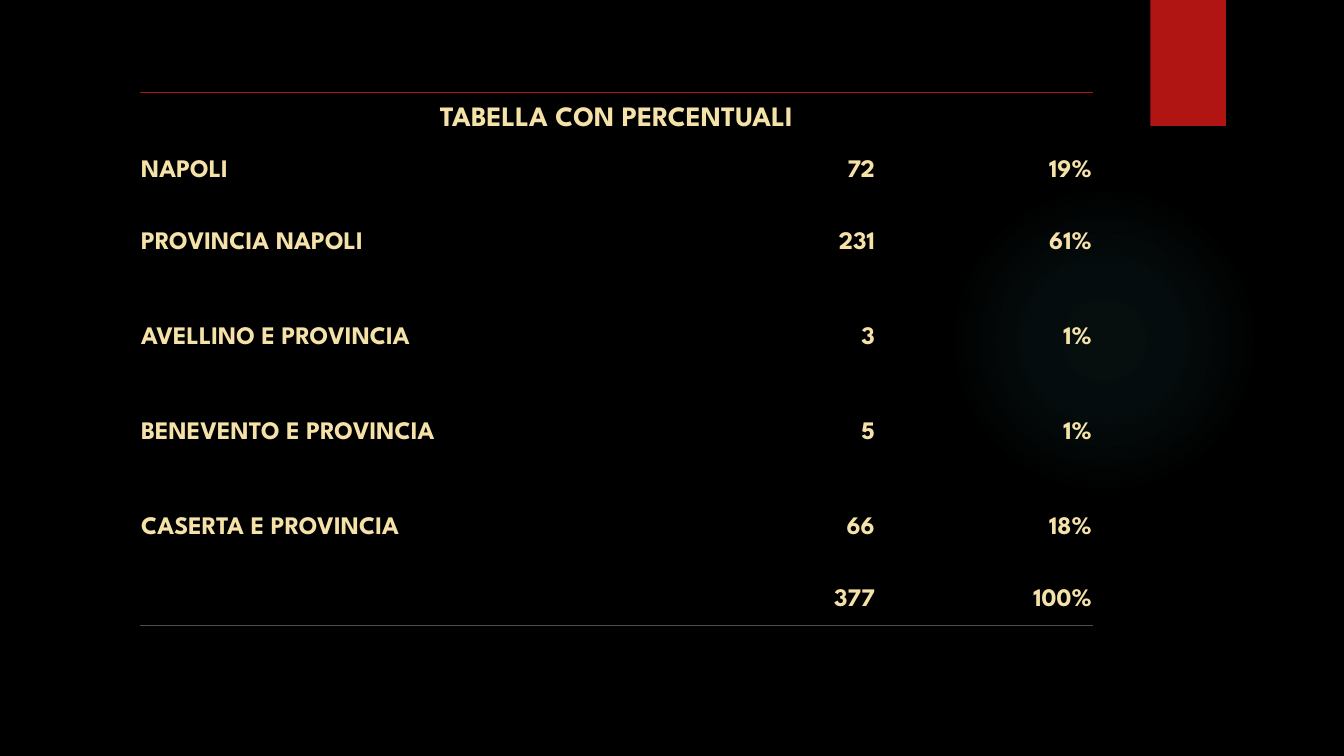
from lxml import etree
from pptx import Presentation
from pptx import util as u
from pptx.dml.color import RGBColor
from pptx.enum import shapes, text
from pptx.oxml import ns

Pt = u.Pt
HUES = {"back": "000000", "glow": "50B9C1", "red": "B01513",
        "gray": "4D4D4D", "text": "F5E2A9"}
FONT = "League Spartan"
PLAIN = "{2D5ABB26-0587-4C30-8999-92F81FD0307C}"  # no style, no grid
LEFT, RIGHT = text.PP_ALIGN.LEFT, text.PP_ALIGN.RIGHT
COLS = [229.7, 229.7, 66.2, 154.8]
ROWS = [38.2, 35.3] + [67.9] * 4 + [35.3]
TITLE = "TABELLA CON PERCENTUALI"
DATA = [
    ("NAPOLI", "72", "19%"),
    ("PROVINCIA NAPOLI", "231", "61%"),
    ("AVELLINO E PROVINCIA", "3", "1%"),
    ("BENEVENTO E PROVINCIA", "5", "1%"),
    ("CASERTA E PROVINCIA", "66", "18%"),
    ("", "377", "100%"),
]


def hue(name):
    return RGBColor.from_string(HUES[name])


def node(up, tag, **attrs):
    return etree.SubElement(up, ns.qn(tag), attrs)


def add_form(slide, kind, box, name):
    form = slide.shapes.add_shape(kind, *[Pt(n) for n in box])
    form.shadow.inherit = False
    form.fill.solid()
    form.fill.fore_color.rgb = hue(name)
    form.line.fill.background()
    return form


def add_glow(slide, box):
    form = add_form(slide, shapes.MSO_SHAPE.OVAL, box, "glow")
    props = form._element.spPr
    grad = etree.Element(ns.qn("a:gradFill"), rotWithShape="1")
    stops = node(grad, "a:gsLst")
    for pos, alpha in [(0, 7), (36, 6), (69, 0)]:
        stop = node(stops, "a:gs", pos=str(pos * 1000))
        tint = node(stop, "a:srgbClr", val=HUES["glow"])
        node(tint, "a:alpha", val=str(alpha * 1000))
    way = node(grad, "a:path", path="circle")
    node(way, "a:fillToRect", l="50000", t="50000", r="50000", b="50000")
    props.replace(props.find(ns.qn("a:solidFill")), grad)


def set_cell(cell, words, size, align):
    para = cell.text_frame.paragraphs[0]
    para.alignment = align
    run = para.add_run()
    run.text = words
    font = run.font
    font.name, font.size, font.bold = FONT, Pt(size), True
    font.color.rgb = hue("text")


def add_rule(cell, side, name):
    line = etree.Element(ns.qn("a:" + side), w=str(Pt(1)))
    node(node(line, "a:solidFill"), "a:srgbClr", val=HUES[name])
    cell._tc.get_or_add_tcPr().insert(0, line)


def add_grid(slide, left, top):
    frame = slide.shapes.add_table(len(ROWS), len(COLS), Pt(left), Pt(top),
                                   Pt(sum(COLS)), Pt(sum(ROWS)))
    grid = frame.table
    grid.first_row = grid.horz_banding = False
    grid._tbl.tblPr.find(ns.qn("a:tableStyleId")).text = PLAIN
    for col, wide in zip(grid.columns, COLS):
        col.width = Pt(wide)
    for row, high in zip(grid.rows, ROWS):
        row.height = Pt(high)
    for cell in grid.iter_cells():
        cell.fill.background()
        cell.vertical_anchor = text.MSO_ANCHOR.MIDDLE
        cell.margin_left = cell.margin_right = cell.margin_top = Pt(0.75)
        cell.margin_bottom = 0

    # Joined cells
    last = len(ROWS) - 1
    for row, end in [(0, 3), (1, 1), (last, 1)]:
        grid.cell(row, 0).merge(grid.cell(row, end))

    # Words and values
    set_cell(grid.cell(0, 0), TITLE, 20, text.PP_ALIGN.CENTER)
    for row, items in enumerate(DATA, 1):
        for col, words in zip((0, 2, 3), items):
            if words:
                set_cell(grid.cell(row, col), words, 18, RIGHT if col else LEFT)

    # Top and bottom rules
    for col in range(len(COLS)):
        add_rule(grid.cell(0, col), "lnT", "red")
        add_rule(grid.cell(last, col), "lnB", "gray")


def main():
    deck = Presentation()
    deck.slide_width, deck.slide_height = Pt(960), Pt(540)
    slide = deck.slides.add_slide(deck.slide_layouts[6])
    slide.background.fill.solid()
    slide.background.fill.fore_color.rgb = hue("back")

    # Backdrop
    add_glow(slide, (677.5, 131.8, 221.8, 221.8))
    add_form(slide, shapes.MSO_SHAPE.RECTANGLE, (821.7, 0, 54, 90), "red")

    # Table
    add_grid(slide, 100.1, 66.2)
    deck.save("out.pptx")


if __name__ == "__main__":
    main()
